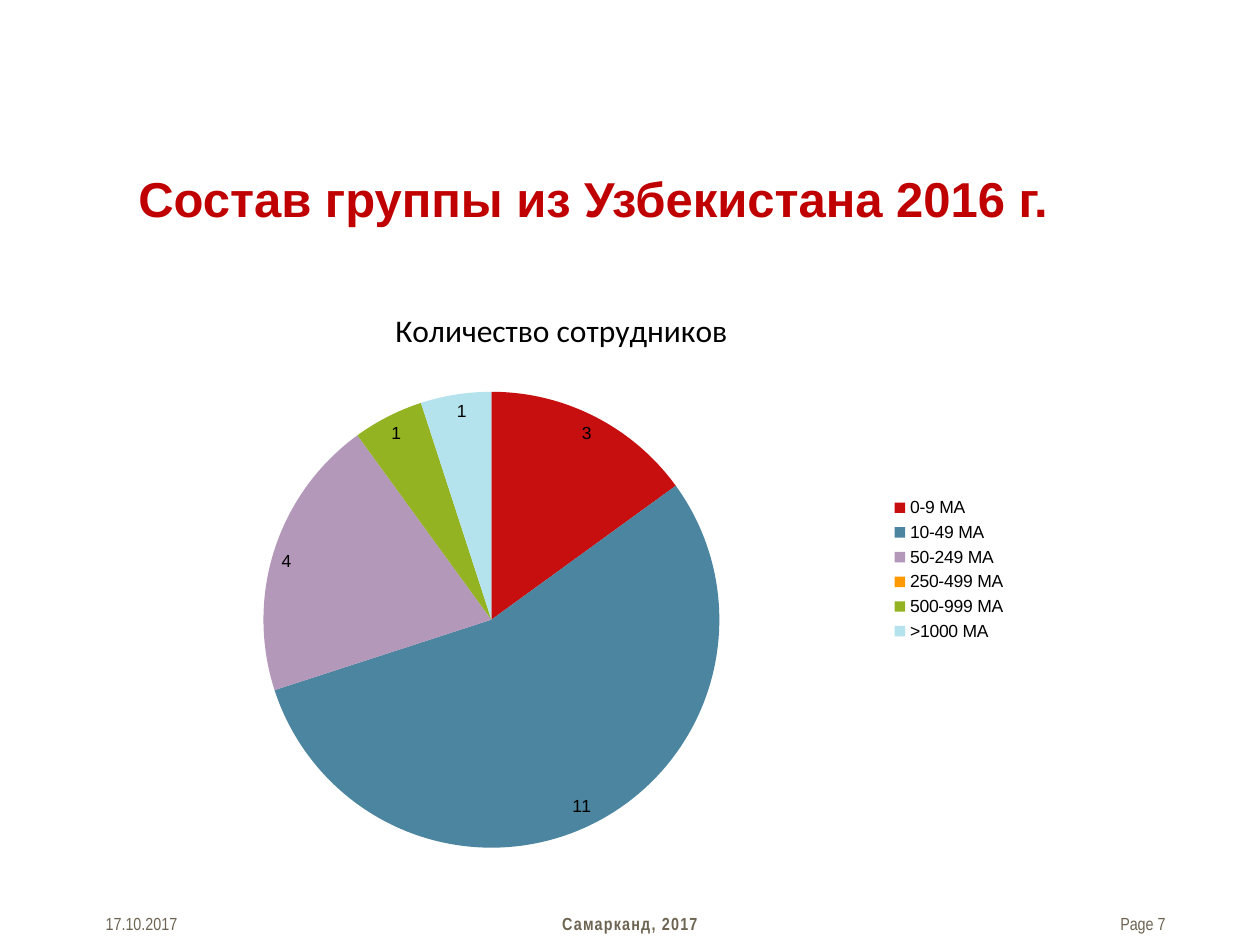
import pptx
import pptx.chart.data
import pptx.dml.color
import pptx.enum.chart
import pptx.enum.text
import pptx.util
from lxml import etree
from pptx.util import Inches, Pt

RGBColor = pptx.dml.color.RGBColor
Align = pptx.enum.text.PP_ALIGN

BLACK = RGBColor(0x00, 0x00, 0x00)
TITLE_RED = RGBColor(0xC0, 0x00, 0x00)
FOOTER_BROWN = RGBColor(0x6E, 0x64, 0x52)
RED = RGBColor(0xC8, 0x0F, 0x0F)
BLUE = RGBColor(0x4B, 0x85, 0x9F)
LILAC = RGBColor(0xB4, 0x98, 0xBA)
ORANGE = RGBColor(0xFF, 0x99, 0x00)
GREEN = RGBColor(0x94, 0xB3, 0x22)
PALE_BLUE = RGBColor(0xB4, 0xE3, 0xED)

CHART_NS = "http://schemas.openxmlformats.org/drawingml/2006/chart"

STAFF = [
    ("0-9 MA", 3, RED),
    ("10-49 MA", 11, BLUE),
    ("50-249 MA", 4, LILAC),
    ("250-499 MA", 0, ORANGE),
    ("500-999 MA", 1, GREEN),
    (">1000 MA", 1, PALE_BLUE),
]


def set_layout(parent, index, **fractions):
    """Place a chart part by fractions of the chart area."""
    for old in parent.findall(f"{{{CHART_NS}}}layout"):
        parent.remove(old)
    layout = etree.Element(f"{{{CHART_NS}}}layout")
    manual = etree.SubElement(layout, f"{{{CHART_NS}}}manualLayout")
    values = {"xMode": "edge", "yMode": "edge", **fractions}
    if "w" in fractions:
        values = {"layoutTarget": "inner", **values}
    for tag, value in values.items():
        etree.SubElement(manual, f"{{{CHART_NS}}}{tag}", val=str(value))
    parent.insert(index, layout)


class SlideBuilder:
    footer_font = "Arial Narrow"
    body_font = "Arial"

    def __init__(self, slide):
        self.s = slide

    def style(self, font, name, size, color, bold=False):
        font.name, font.size, font.bold = name, Pt(size), bold
        font.color.rgb = color

    def text(self, text, box, name, size, color, bold=False,
             align=Align.LEFT, spacing=None):
        sp = self.s.shapes.add_textbox(*map(Inches, box))
        tf = sp.text_frame
        tf.word_wrap = True
        tf.text = text
        p = tf.paragraphs[0]
        p.alignment = align
        r = p.runs[0]
        self.style(r.font, name, size, color, bold)
        if spacing:
            r.font._element.set("spc", str(round(spacing * 100)))
        return sp

    def title(self, text):
        self.text(text, (1, 1.29, 8.74, 0.5), self.body_font, 28, TITLE_RED, True)

    def footer(self, text, left, width, **options):
        return self.text(text, (left, 7.2, width, 0.27), self.footer_font, 10,
                         FOOTER_BROWN, **options)

    def pie(self, title, rows, box):
        names, values, colors = zip(*rows)
        data = pptx.chart.data.CategoryChartData()
        data.categories = names
        data.add_series("Series 1", values)
        chart = self.s.shapes.add_chart(
            pptx.enum.chart.XL_CHART_TYPE.PIE, *map(Inches, box), data).chart
        self.style(chart.font, self.body_font, 10, BLACK)

        chart.has_title = True
        tf = chart.chart_title.text_frame
        tf.text = title
        self.style(tf.paragraphs[0].runs[0].font, "Calibri", 18, BLACK)
        set_layout(chart.chart_title._element, 1, x=0.32, y=0.05)

        chart.has_legend = True
        chart.legend.position = pptx.enum.chart.XL_LEGEND_POSITION.RIGHT
        chart.legend.include_in_layout = False

        plot = chart.plots[0]
        plot.vary_by_categories = True
        for i, color in enumerate(colors):
            fill = plot.series[0].points[i].format.fill
            fill.solid()
            fill.fore_color.rgb = color
        plot.has_data_labels = True
        labels = plot.data_labels
        labels.show_value = True
        labels.show_percentage = False
        labels.number_format = "#"  # leaves the zero slice unlabelled
        labels.number_format_is_linked = False
        labels.position = pptx.enum.chart.XL_LABEL_POSITION.INSIDE_END
        self.style(labels.font, self.body_font, 10, BLACK)
        set_layout(chart._chartSpace.chart.plotArea, 0,
                   x=0.18, y=0.2, w=0.5, h=0.77)


def main():
    prs = pptx.Presentation()
    prs.slide_width, prs.slide_height = Inches(10), Inches(7.5)
    b = SlideBuilder(prs.slides.add_slide(prs.slide_layouts[6]))
    page = b.footer("Page 7", 8.24, 1.01, align=Align.RIGHT)
    page.text_frame.margin_right = 0
    b.title("Состав группы из Узбекистана 2016 г.")
    b.footer("17.10.2017", 0.74, 1.42)
    b.footer("Самарканд, 2017", 3.13, 3.74, bold=True,
             align=Align.CENTER, spacing=0.7)
    b.pie("Количество сотрудников", STAFF, (0.74, 2.17, 7.35, 4.7))
    prs.save("out.pptx")


if __name__ == "__main__":
    main()
